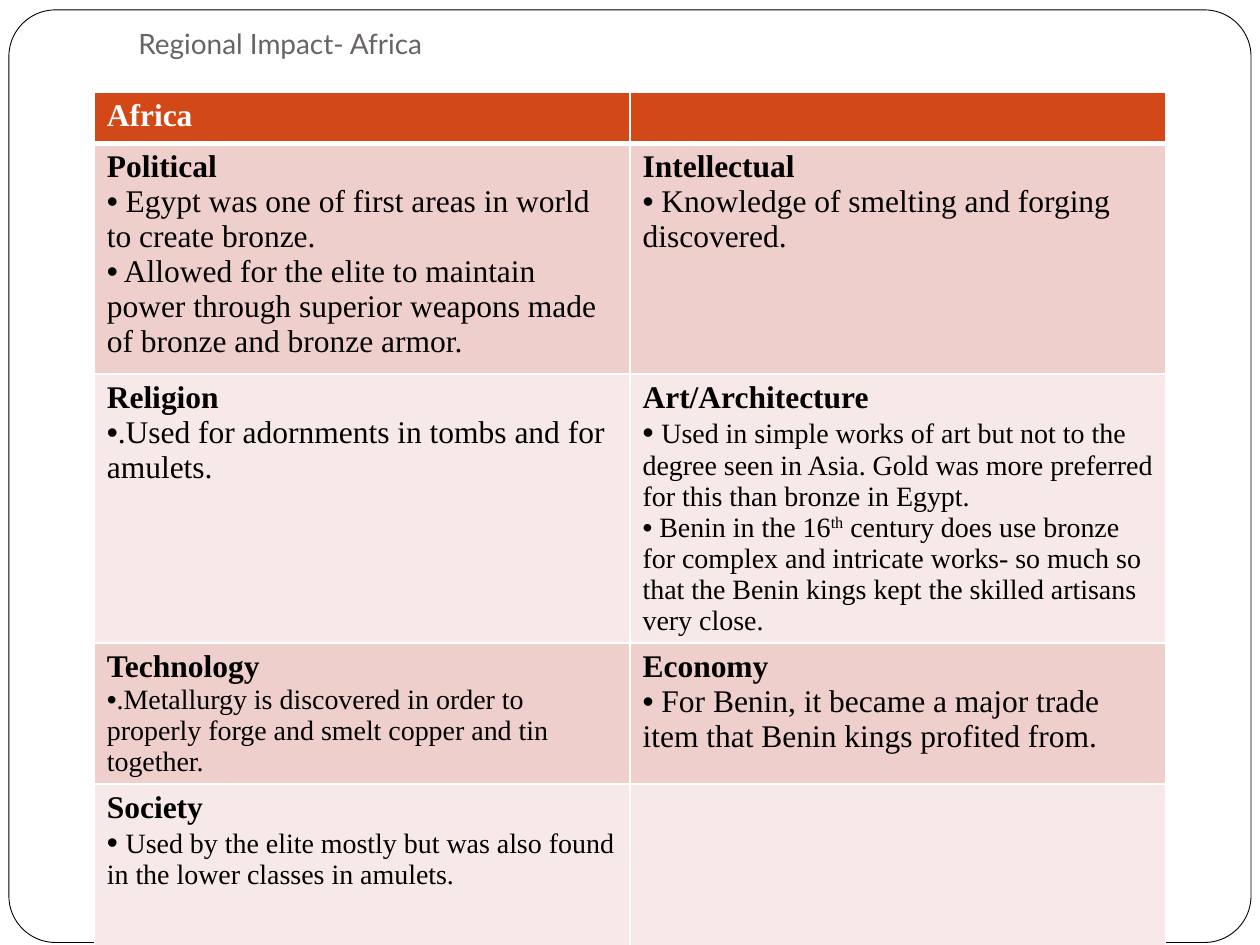
from lxml import etree
from pptx import Presentation
from pptx.dml.color import RGBColor
from pptx.enum.shapes import MSO_SHAPE
from pptx.enum.text import MSO_ANCHOR, PP_ALIGN
from pptx.oxml.ns import qn
from pptx.util import Cm, Pt

ROUNDED = MSO_SHAPE.ROUNDED_RECTANGLE
BOTTOM = MSO_ANCHOR.BOTTOM
LEFT = PP_ALIGN.LEFT
TITLE_ONLY = 5

BODY_FONT = "Times New Roman"
HEADER_FILL, BAND_FILLS = "D34817", ("EFCFCC", "F7E9E8")
COLUMN_WIDTH = 10.8
ROW_HEIGHTS = (0.99, 4.65, 4.98, 2.74, 3.45)

# Each topic: heading, then bullets; a bullet is a list of (text, size, baseline)
TOPICS = [
    [
        ("Political", [
            [(" Egypt was one of first areas in world to create bronze.", 18, 0)],
            [(" Allowed for the elite to maintain power through superior weapons "
              "made of bronze and bronze armor.", 18, 0)],
        ]),
        ("Intellectual", [
            [(" Knowledge of smelting and forging discovered.", 18, 0)],
        ]),
    ],
    [
        ("Religion", [
            [(".Used for adornments in tombs and for amulets.", 18, 0)],
        ]),
        ("Art/Architecture", [
            [(" ", 18, 0),
             ("Used in simple works of art but not to the degree seen in Asia. "
              "Gold was more preferred for this than bronze in Egypt.", 16, 0)],
            [(" Benin in the 16", 16, 0), ("th", 16, 30),
             (" century does use bronze for complex and intricate works- so much "
              "so that the Benin kings kept the skilled artisans very close.", 16, 0)],
        ]),
    ],
    [
        ("Technology", [
            [(".Metallurgy is discovered in order to properly forge and smelt "
              "copper and tin together.", 16, 0)],
        ]),
        ("Economy", [
            [(" For Benin, it became a major trade item that Benin kings "
              "profited from.", 18, 0)],
        ]),
    ],
    [
        ("Society", [
            [(" ", 18, 0),
             ("Used by the elite mostly but was also found in the lower classes "
              "in amulets.", 16, 0)],
        ]),
        None,
    ],
]


def rgb(value):
    return RGBColor.from_string(value)


def add_text(paragraph, text, size=18, color="000000", bold=False,
             font=BODY_FONT, baseline=0):
    run = paragraph.add_run()
    run.text = text
    run.font.name = font
    run.font.size = Pt(size)
    run.font.bold = bold
    run.font.color.rgb = rgb(color)
    if baseline:
        run.font._element.set("baseline", str(baseline * 1000))


def add_bullet(paragraph):
    properties = paragraph._p.get_or_add_pPr()
    properties.set("marL", "0")
    properties.set("indent", "0")
    etree.SubElement(properties, qn("a:buFont"), typeface="Arial")
    etree.SubElement(properties, qn("a:buChar"), char="•")


def format_cell(cell, fill, top=1, bottom=1):
    # White borders, which must come before the fill in the cell properties
    properties = cell._tc.get_or_add_tcPr()
    for side, width in (("L", 1), ("R", 1), ("T", top), ("B", bottom)):
        line = etree.SubElement(properties, qn(f"a:ln{side}"), w=str(Pt(width)))
        solid = etree.SubElement(line, qn("a:solidFill"))
        etree.SubElement(solid, qn("a:srgbClr"), val="FFFFFF")
    cell.fill.solid()
    cell.fill.fore_color.rgb = rgb(fill)


def fill_topic(cell, heading, bullets):
    frame = cell.text_frame
    add_text(frame.paragraphs[0], heading, bold=True)
    for runs in bullets:
        paragraph = frame.add_paragraph()
        add_bullet(paragraph)
        for text, size, baseline in runs:
            add_text(paragraph, text, size=size, baseline=baseline)


def add_title(slide):
    title = slide.shapes.title
    title.left, title.top, title.width, title.height = (
        Cm(2.54), Cm(0.76), Cm(21.59), Cm(0.71))
    frame = title.text_frame
    frame.word_wrap = True
    frame.vertical_anchor = BOTTOM
    frame.margin_left = frame.margin_right = frame.margin_bottom = Cm(0.25)
    frame.margin_top = Cm(0.13)
    heading = frame.paragraphs[0]
    heading.alignment = LEFT
    add_text(heading, "Regional Impact- Africa", size=16, color="696464",
             font="Lato")


def add_page_border(slide):
    border = slide.shapes.add_shape(
        ROUNDED, Cm(0.18), Cm(0.2), Cm(25.04), Cm(18.8))
    border.adjustments[0] = 0.05
    border.shadow.inherit = False
    border.fill.solid()
    border.fill.fore_color.rgb = rgb("FFFFFF")
    border.line.color.rgb = rgb("000000")
    border.line.width = Pt(0.5)
    # Keep the border behind the title
    slide.shapes.title.element.addprevious(border.element)


def add_impact_table(slide):
    table = slide.shapes.add_table(
        len(ROW_HEIGHTS), 2, Cm(1.9), Cm(1.86),
        Cm(2 * COLUMN_WIDTH), Cm(sum(ROW_HEIGHTS))).table
    for column in table.columns:
        column.width = Cm(COLUMN_WIDTH)
    for row, height in zip(table.rows, ROW_HEIGHTS):
        row.height = Cm(height)

    # Header row
    for cell in table.rows[0].cells:
        format_cell(cell, HEADER_FILL, bottom=3)
    add_text(table.cell(0, 0).text_frame.paragraphs[0], "Africa",
             color="FFFFFF", bold=True)

    # Topic rows in alternating bands
    for index, topics in enumerate(TOPICS):
        for column, topic in enumerate(topics):
            cell = table.cell(index + 1, column)
            format_cell(cell, BAND_FILLS[index % 2], top=1 if index else 3)
            if topic:
                fill_topic(cell, *topic)


def main():
    presentation = Presentation()
    presentation.slide_width = Cm(25.4)
    presentation.slide_height = Cm(19.05)
    slide = presentation.slides.add_slide(
        presentation.slide_layouts[TITLE_ONLY])
    add_title(slide)
    add_page_border(slide)
    add_impact_table(slide)
    presentation.save("out.pptx")


if __name__ == "__main__":
    main()
